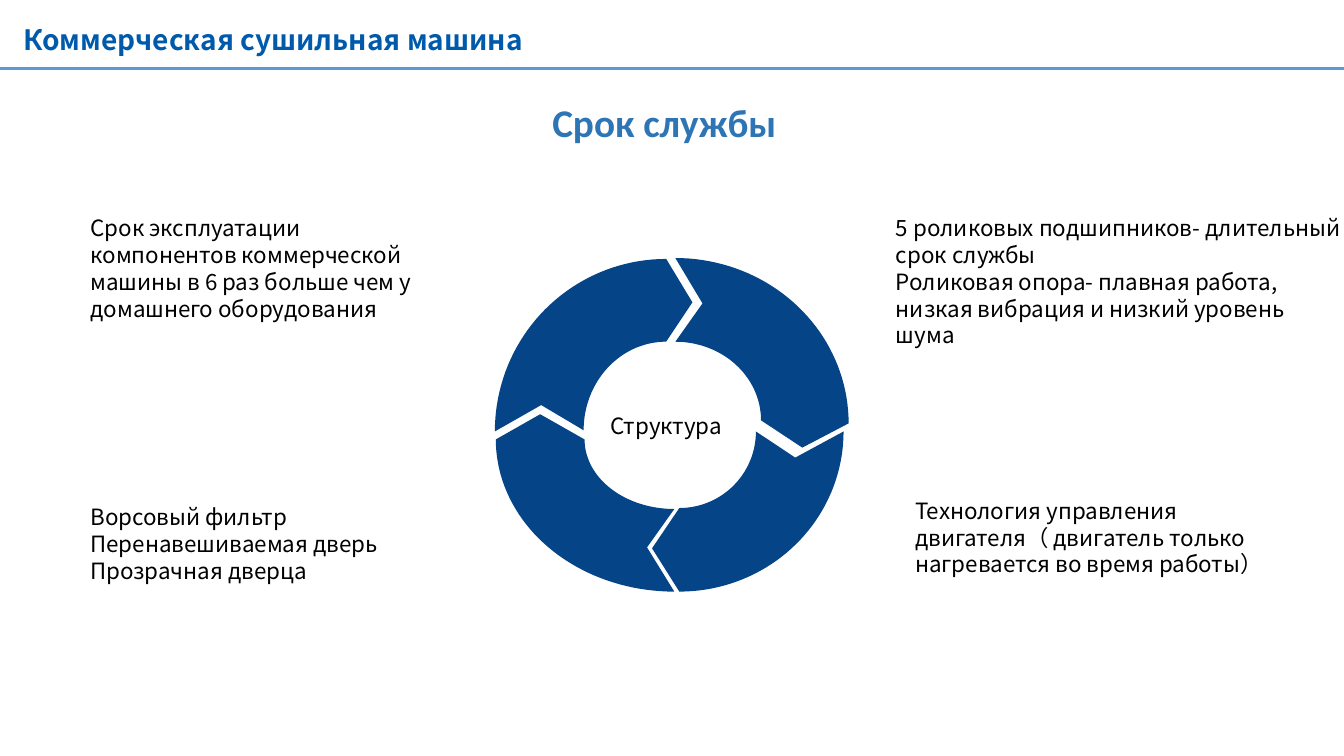
from dataclasses import dataclass
from math import cos, pi, sin

from lxml.etree import SubElement
from pptx import Presentation
from pptx.dml.color import RGBColor as Color
from pptx.enum.shapes import MSO_CONNECTOR as Link
from pptx.enum.text import MSO_ANCHOR as Anchor, PP_ALIGN as Align
from pptx.oxml.ns import qn
from pptx.util import Pt


@dataclass(frozen=True)
class Theme:
    ink: Color = Color(0, 0, 0)
    head: Color = Color(0x00, 0x5A, 0xAB)
    topic: Color = Color(0x2E, 0x75, 0xB6)
    rule: Color = Color(0x5B, 0x9B, 0xD5)
    ring: Color = Color(0x05, 0x44, 0x87)
    sans: str = "Noto Sans CJK SC"
    latin: str = "Calibri"
    body: int = 16
    title: int = 20
    large: int = 28


THEME = Theme()

NOTES = [
    (57.6, 144, 249.8, 95, ["Срок эксплуатации компонентов коммерческой машины "
                            "в 6 раз больше чем у домашнего оборудования"]),
    (632.9, 148.3, 331.9, 105.1, ["5 роликовых подшипников- длительный срок службы",
                                  "Роликовая опора- плавная работа, низкая вибрация "
                                  "и низкий уровень шума"]),
    (57.6, 344.9, 280.8, 87.1, ["Ворсовый фильтр", "Перенавешиваемая дверь",
                                "Прозрачная дверца"]),
    (646.6, 336.2, 280.8, 95, ["Технология управления двигателя（ двигатель только "
                               "нагревается во время работы）"]),
]

PARTS = [
    (True, (482.4, 184.3), (606.2, 302.4), (573.1, 319.7),
     (543.6, 300.2), (482.4, 244.1), (501.8, 216.7)),
    (False, (353.5, 308.2), (475.9, 185), (494.6, 216),
     (475.9, 244.1), (416.9, 307.4), (386.6, 289.4)),
    (True, (481.7, 422.6), (354.2, 313.9), (385.9, 295.9),
     (417.6, 313.9), (481.7, 363.6), (462.2, 391)),
    (False, (602.6, 308.2), (485.3, 422.6), (465.8, 391.7),
     (485.3, 362.9), (540, 308.2), (568.1, 326.9)),
]


def place(shape, left, top, width, height):
    shape.left, shape.top = Pt(left), Pt(top)
    shape.width, shape.height = Pt(width), Pt(height)


def write(shape, lines, size, color, name=THEME.sans, bold=False,
          align=Align.LEFT, anchor=Anchor.TOP, wrap=True, inset=(7.2, 3.6)):
    frame = shape.text_frame
    frame.text = "\n".join(lines)
    frame.word_wrap = wrap
    frame.vertical_anchor = anchor
    frame.margin_left = frame.margin_right = Pt(inset[0])
    frame.margin_top = frame.margin_bottom = Pt(inset[1])
    for para in frame.paragraphs:
        para.alignment = align
        font = para.font
        font.name, font.size, font.bold = name, Pt(size), bold
        font.color.rgb = color


def add_text(slide, box, lines, size, color, **style):
    shape = slide.shapes.add_textbox(*map(Pt, box))
    write(shape, lines, size, color, **style)


def add_rule(slide, y, width):
    line = slide.shapes.add_connector(Link.STRAIGHT, 0, Pt(y), Pt(width), Pt(y))
    line.line.color.rgb = THEME.rule
    line.line.width = Pt(2.25)
    SubElement(line._element.spPr, qn("a:effectLst"))


def bend(start, end, pole, steps=40):
    (ax, ay), (bx, by) = start, end
    for step in range(steps + 1):
        turn = step / steps * pi / 2
        if pole:
            yield ax + (bx - ax) * sin(turn), by + (ay - by) * cos(turn)
        else:
            yield bx + (ax - bx) * cos(turn), ay + (by - ay) * sin(turn)


def add_part(group, pole, start, end, tip, back, close, notch):
    dots = [*bend(start, end, pole), tip, *bend(back, close, not pole), notch]
    dots = [(Pt(x), Pt(y)) for x, y in dots]
    pen = group.shapes.build_freeform(*dots[0])
    pen.add_line_segments(dots[1:], close=True)
    part = pen.convert_to_shape()
    part.shadow.inherit = False
    part.fill.solid()
    part.fill.fore_color.rgb = THEME.ring
    part.line.fill.background()


def main():
    deck = Presentation()
    deck.slide_width, deck.slide_height = Pt(960), Pt(540)
    slide = deck.slides.add_slide(deck.slide_layouts[5])
    title = slide.shapes.title
    place(title, 9.4, 12.2, 524.2, 31.7)
    write(title, ["Коммерческая сушильная машина"], THEME.title, THEME.head, bold=True)
    add_rule(slide, 49, 960)
    group = slide.shapes.add_group_shape()
    for part in PARTS:
        add_part(group, *part)
    add_text(slide, (418.3, 291.6, 115.2, 25.2), ["Структура"], THEME.body,
             THEME.ink, align=Align.CENTER, inset=(5.8, 2.9))
    for *box, lines in NOTES:
        add_text(slide, box, lines, THEME.body, THEME.ink, anchor=Anchor.MIDDLE)
    add_text(slide, (387.4, 67, 176.4, 41), ["Срок службы"], THEME.large,
             THEME.topic, name=THEME.latin, bold=True, wrap=False)
    deck.save("out.pptx")


if __name__ == "__main__":
    main()
